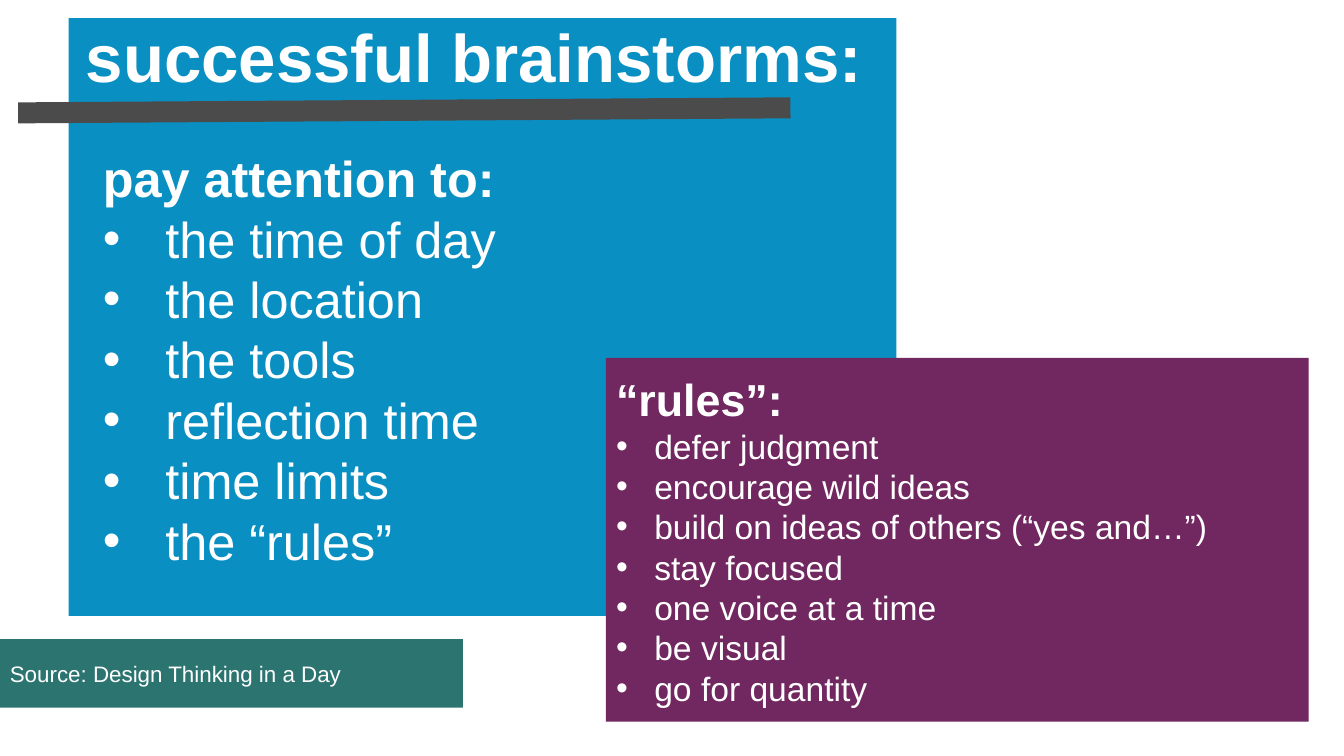
from dataclasses import dataclass

from lxml.etree import SubElement
from pptx import Presentation
from pptx.dml.color import RGBColor
from pptx.enum.shapes import MSO_CONNECTOR, MSO_SHAPE
from pptx.enum.text import MSO_ANCHOR, MSO_AUTO_SIZE, PP_ALIGN
from pptx.oxml.ns import qn
from pptx.util import Inches, Pt


@dataclass(frozen=True)
class Theme:
    font: str = "Arial"
    text: str = "FFFFFF"
    blue: str = "0A8FC2"
    purple: str = "71275F"
    teal: str = "2C7470"
    rule: str = "4B4B4B"
    title_size: int = 48
    attention_size: int = 36
    rules_heading_size: int = 32
    rules_size: int = 24
    source_size: int = 16
    rule_width: int = 15


ATTENTION_POINTS = [
    "the time of day",
    "the location",
    "the tools",
    "reflection time",
    "time limits",
    "the “rules”",
]
BRAINSTORM_RULES = [
    "defer judgment",
    "encourage wild ideas",
    "build on ideas of others (“yes and…”)",
    "stay focused",
    "one voice at a time",
    "be visual",
    "go for quantity",
]


def apply_format(target, values):
    for name, value in values.items():
        setattr(target, name, value)


class SlideBuilder:
    def __init__(self, slide, theme):
        self.slide = slide
        self.theme = theme

    def panel(self, box, color):
        shape = self.slide.shapes.add_shape(MSO_SHAPE.RECTANGLE, *map(Inches, box))
        shape.shadow.inherit = False
        self.fill(shape, color)
        shape.line.fill.background()

    def fill(self, shape, color):
        shape.fill.solid()
        shape.fill.fore_color.rgb = RGBColor.from_string(color)

    def line(self, start, end):
        connector = self.slide.shapes.add_connector(
            MSO_CONNECTOR.STRAIGHT, *map(Inches, start + end))
        connector.line.color.rgb = RGBColor.from_string(self.theme.rule)
        connector.line.width = Pt(self.theme.rule_width)
        SubElement(connector._element.spPr, qn("a:effectLst"))

    def place(self, shape, box, anchor=MSO_ANCHOR.TOP, wrap=True):
        """Position a text shape and bring it to the front."""
        left, top, width, height = map(Inches, box)
        apply_format(shape, {"left": left, "top": top, "width": width, "height": height})
        apply_format(shape.text_frame, {
            "word_wrap": wrap, "auto_size": MSO_AUTO_SIZE.NONE, "vertical_anchor": anchor})
        self.slide.shapes._spTree.append(shape._element)

    def set_text(self, paragraph, text, size, bold=False):
        paragraph.text = text
        apply_format(paragraph, {
            "alignment": PP_ALIGN.LEFT, "line_spacing": 1.0,
            "space_before": Pt(0), "space_after": Pt(0)})
        font = paragraph.runs[0].font
        apply_format(font, {"name": self.theme.font, "size": Pt(size), "bold": bold})
        font.color.rgb = RGBColor.from_string(self.theme.text)

    def set_bullet(self, paragraph, indent):
        """Hang the paragraph on a bullet, or remove the bullet if indent is 0."""
        properties = paragraph._p.get_or_add_pPr()
        properties.set("marL", str(Inches(indent)))
        properties.set("indent", str(-Inches(indent)))
        if indent:
            SubElement(properties, qn("a:buFont"), typeface=self.theme.font)
            SubElement(properties, qn("a:buChar"), char="•")
        else:
            SubElement(properties, qn("a:buNone"))

    def title(self, text, box):
        shape = self.slide.shapes.title
        self.place(shape, box, wrap=False)
        self.set_text(shape.text_frame.paragraphs[0], text, self.theme.title_size, bold=True)

    def bullet_list(self, index, box, heading, items, sizes, indent,
                    anchor=MSO_ANCHOR.TOP, color=None):
        shape = self.slide.placeholders[index]
        self.place(shape, box, anchor)
        if color:
            self.fill(shape, color)
        heading_size, item_size = sizes
        first = shape.text_frame.paragraphs[0]
        self.set_text(first, heading, heading_size, bold=True)
        self.set_bullet(first, 0)
        for item in items:
            paragraph = shape.text_frame.add_paragraph()
            self.set_text(paragraph, item, item_size)
            self.set_bullet(paragraph, indent)

    def label(self, text, box, size):
        shape = self.slide.shapes.add_textbox(*map(Inches, box))
        self.place(shape, box, wrap=False)
        self.set_text(shape.text_frame.paragraphs[0], text, size)


def main():
    theme = Theme()
    presentation = Presentation()
    presentation.slide_width = Inches(13.33)
    presentation.slide_height = Inches(7.5)
    two_content = presentation.slide_layouts.get_by_name("Two Content")
    builder = SlideBuilder(presentation.slides.add_slide(two_content), theme)

    builder.panel((0.68, 0.18, 8.21, 5.93), theme.blue)
    builder.line((0.18, 1.12), (7.84, 1.07))
    builder.bullet_list(
        1, (0.92, 1.41, 7.76, 4.34), "pay attention to:", ATTENTION_POINTS,
        (theme.attention_size, theme.attention_size), 0.62)
    builder.bullet_list(
        2, (6.01, 3.55, 6.97, 3.61), "“rules”:", BRAINSTORM_RULES,
        (theme.rules_heading_size, theme.rules_size), 0.38,
        MSO_ANCHOR.MIDDLE, theme.purple)
    builder.title("successful brainstorms:", (0.75, 0.1, 7.98, 0.91))
    builder.panel((0, 6.34, 4.59, 0.68), theme.teal)
    builder.label("Source: Design Thinking in a Day", (0, 6.5, 3.53, 0.37), theme.source_size)

    presentation.save("out.pptx")


if __name__ == "__main__":
    main()
